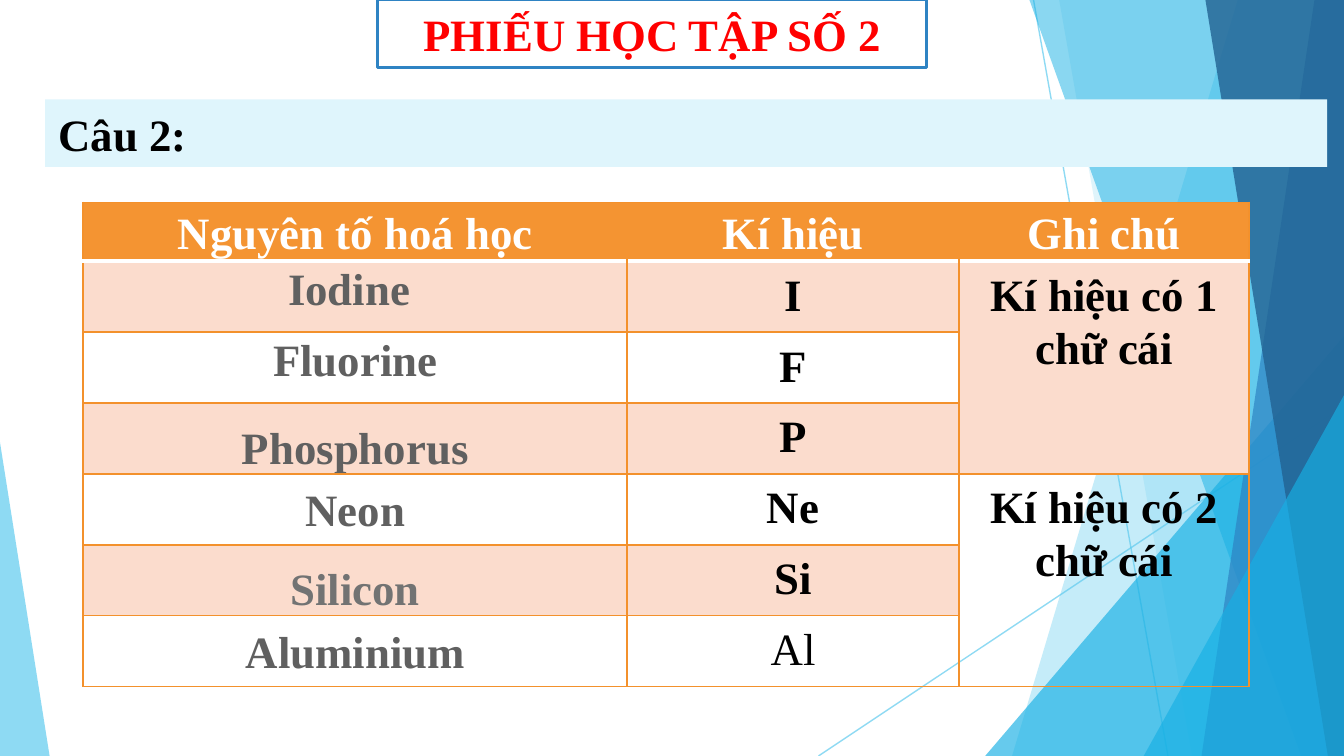
from lxml.etree import SubElement
from pptx import Presentation
from pptx.dml.color import RGBColor
from pptx.enum.shapes import MSO_CONNECTOR as Connector, MSO_SHAPE as Preset
from pptx.enum.text import MSO_ANCHOR as Anchor, PP_ALIGN as Align
from pptx.oxml import parse_xml
from pptx.oxml.ns import nsdecls, qn
from pptx.util import Pt

WIDTH, HEIGHT = 720, 405
FONT = "Times New Roman"
ORANGE, WHITE, BLACK, GREY = "F3912C", "FFFFFF", "000000", "606060"

RAYS = [((553.7, 0), (625.7, HEIGHT)), ((WIDTH, 217.4), (438.5, HEIGHT))]
FACETS = [
    ("band", (663.1, 542.2), "5FCBEF", 36),
    ("band", (567.4, 638.6), "5FCBEF", 20),
    ("triangle", (527.8, 180, 192.2, 225, 1), "17B0E4", 66),
    ("band", (551.5, 697), "17B0E4", 50),
    ("band", (704.2, 643.7), "2E83C3", 70),
    ("band", (645.8, 711.4), "226292", 80),
    ("triangle", (612.7, 211.7, 107.3, 193.3, 1), "17B0E4", 66),
    ("triangle", (0, 236.9, 26.6, 168.1, 0), "5FCBEF", 70),
]
BANNERS = [
    ("PHIẾU HỌC TẬP SỐ 2", (202.2, 0, 294.4, 36.2), WHITE, "2E83C3", "FF0000", Align.CENTER),
    ("Câu 2:", (24.2, 53.2, 686.8, 36.2), "DFF5FC", None, BLACK, Align.LEFT),
]
HEADINGS = ["Nguyên tố hoá học", "Kí hiệu", "Ghi chú"]
ELEMENTS = [
    ("Iodine\t", "I", Anchor.TOP, GREY),
    ("Fluorine", "F", Anchor.TOP, GREY),
    ("Phosphorus", "P", Anchor.BOTTOM, GREY),
    ("Neon", "Ne", Anchor.MIDDLE, GREY),
    ("Silicon", "Si", Anchor.BOTTOM, "727373"),
    ("Aluminium", "Al", Anchor.MIDDLE, GREY),
]
NOTES = ["Kí hiệu có 1 chữ cái", "Kí hiệu có 2 chữ cái"]
NOTE_SPAN = 3
COLUMN_WIDTHS = [291.4, 177.8, 155.4]
HEADING_HEIGHT, ELEMENT_HEIGHT = 31.5, 38
TABLE_LEFT, TABLE_TOP = 44.6, 108.4


def paint(fill, color, opacity=100):
    fill.solid()
    fill.fore_color.rgb = RGBColor.from_string(color)
    if opacity < 100:
        tint = fill._xPr.find(qn("a:solidFill"))[0]
        SubElement(tint, qn("a:alpha"), val=str(opacity * 1000))


def style(paragraph, color, align, bold=True):
    paragraph.alignment = align
    font = paragraph.font
    font.name, font.size, font.bold = FONT, Pt(24), bold
    font.color.rgb = RGBColor.from_string(color)


def draw_ray(slide, start, end):
    ray = slide.shapes.add_connector(Connector.STRAIGHT, *map(Pt, start + end))
    ray.line.width = Pt(0.75)
    paint(ray.line.fill, "5FCBEF", 70)
    SubElement(ray._element.spPr, qn("a:effectLst"))


def draw_facet(slide, kind, place, color, opacity):
    if kind == "band":
        top_left, bottom_left = place
        outline = slide.shapes.build_freeform(Pt(top_left), 0)
        corners = [(WIDTH, 0), (WIDTH, HEIGHT), (bottom_left, HEIGHT)]
        outline.add_line_segments([(Pt(x), Pt(y)) for x, y in corners])
        facet = outline.convert_to_shape()
    else:
        *box, apex = place
        facet = slide.shapes.add_shape(Preset.ISOSCELES_TRIANGLE, *map(Pt, box))
        facet.adjustments[0] = apex
    facet.shadow.inherit = False
    facet.line.fill.background()
    paint(facet.fill, color, opacity)


def draw_banner(slide, text, box, fill, edge, color, align):
    banner = slide.shapes.add_shape(Preset.RECTANGLE, *map(Pt, box))
    banner.shadow.inherit = False
    paint(banner.fill, fill)
    if edge:
        paint(banner.line.fill, edge)
        banner.line.width = Pt(1.5)
    else:
        banner.line.fill.background()
    banner.text_frame.text = text
    style(banner.text_frame.paragraphs[0], color, align)


def set_borders(cell, borders):
    properties = cell._tc.get_or_add_tcPr()
    for position, side in enumerate("LRTB"):
        color, width = borders.get(side, (None, 0))
        ink = f'<a:solidFill><a:srgbClr val="{color}"/></a:solidFill>' if color else "<a:noFill/>"
        properties.insert(position, parse_xml(
            f'<a:ln{side} {nsdecls("a")} w="{Pt(width)}">{ink}</a:ln{side}>'))


def fill_cell(cell, text, color, anchor=Anchor.TOP, tight=False, bold=True):
    cell.text = text
    cell.vertical_anchor = anchor
    if tight:
        cell.margin_left = cell.margin_right = cell.margin_top = Pt(0.72)
        cell.margin_bottom = 0
    paragraph = cell.text_frame.paragraphs[0]
    style(paragraph, color, Align.CENTER, bold)
    paragraph.line_spacing = 1.07
    paragraph.space_after = Pt(8)
    if "\t" in text:
        tabs = parse_xml(f'<a:tabLst {nsdecls("a")}><a:tab pos="{Pt(54)}" algn="l"/></a:tabLst>')
        paragraph._p.pPr.find(qn("a:defRPr")).addprevious(tabs)


def draw_table(slide):
    row_heights = [HEADING_HEIGHT] + [ELEMENT_HEIGHT] * len(ELEMENTS)
    table = slide.shapes.add_table(
        len(row_heights), len(COLUMN_WIDTHS), Pt(TABLE_LEFT), Pt(TABLE_TOP),
        Pt(sum(COLUMN_WIDTHS)), Pt(sum(row_heights))).table
    for column, width in zip(table.columns, COLUMN_WIDTHS):
        column.width = Pt(width)
    for row, height in zip(table.rows, row_heights):
        row.height = Pt(height)

    thin, thick = (ORANGE, 1), (WHITE, 2.25)
    for index, heading in enumerate(HEADINGS):
        cell = table.cell(0, index)
        fill_cell(cell, heading, WHITE, Anchor.MIDDLE, tight=True)
        paint(cell.fill, "F49432")
        borders = {"T": thin, "B": thick}
        if index == 0:
            borders["L"] = thin
        if index == len(HEADINGS) - 1:
            borders["R"] = thin
        set_borders(cell, borders)

    for number, (name, symbol, anchor, color) in enumerate(ELEMENTS, 1):
        fill_cell(table.cell(number, 0), name, color, anchor, tight=True)
        fill_cell(table.cell(number, 1), symbol, BLACK, bold=symbol != "Al")
        for index in range(len(HEADINGS)):
            cell = table.cell(number, index)
            band_row = (number - 1) // NOTE_SPAN * NOTE_SPAN + 1 if index == 2 else number
            if band_row % 2:
                paint(cell.fill, "FBDCCD")
            else:
                cell.fill.background()
            set_borders(cell, {"L": thin, "R": thin, "T": thick if number == 1 else thin, "B": thin})

    for index, note in enumerate(NOTES):
        first = 1 + index * NOTE_SPAN
        cell = table.cell(first, 2)
        cell.merge(table.cell(first + NOTE_SPAN - 1, 2))
        fill_cell(cell, note, BLACK)


def main():
    deck = Presentation()
    deck.slide_width, deck.slide_height = Pt(WIDTH), Pt(HEIGHT)
    slide = deck.slides.add_slide(deck.slide_layouts[6])
    for ray in RAYS:
        draw_ray(slide, *ray)
    for facet in FACETS:
        draw_facet(slide, *facet)
    for banner in BANNERS:
        draw_banner(slide, *banner)
    draw_table(slide)
    deck.save("out.pptx")


if __name__ == "__main__":
    main()
